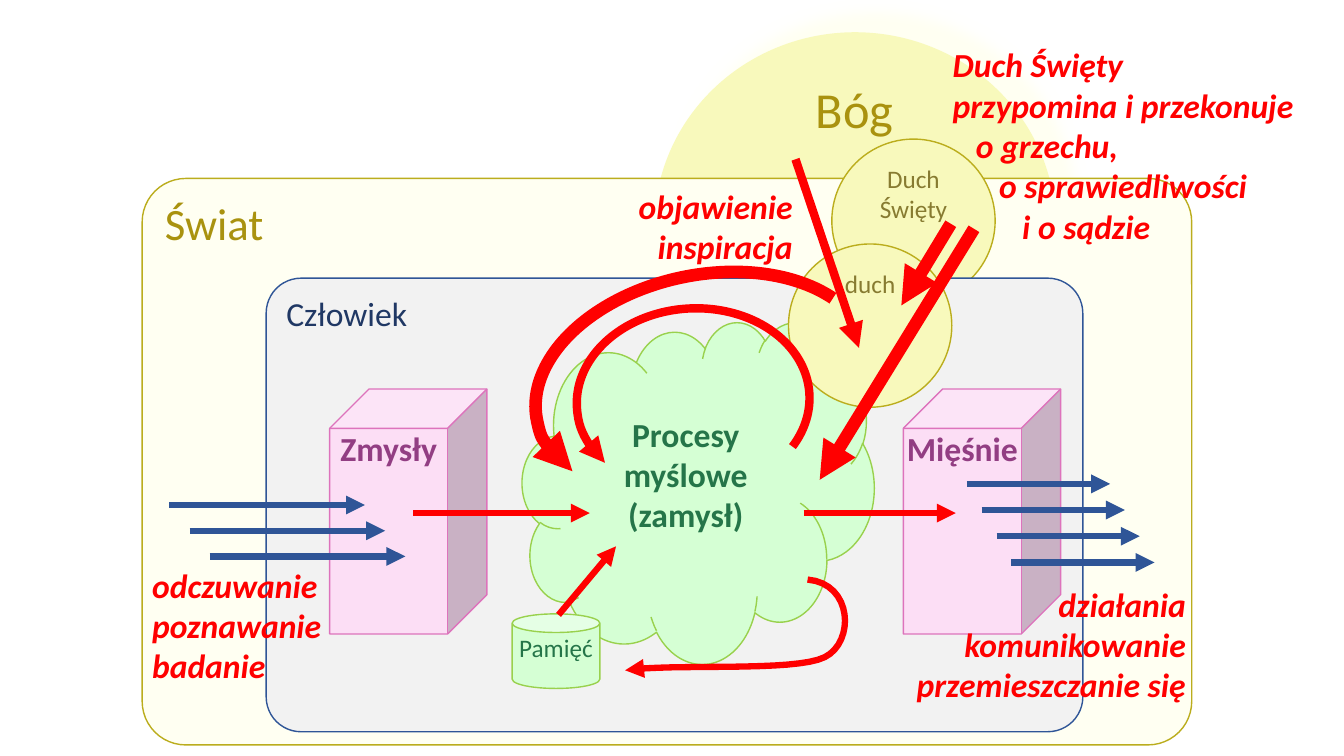
from lxml.etree import SubElement
from pptx import Presentation
from pptx.dml.color import RGBColor
from pptx.enum.shapes import MSO_CONNECTOR, MSO_SHAPE
from pptx.enum.text import MSO_ANCHOR, PP_ALIGN
from pptx.oxml.ns import qn
from pptx.util import Inches, Pt

FONT = "Calibri"
COLORS = {
    "spirit": "F8F9BC", "spirit_line": "BBAD1D", "spirit_text": "877B31",
    "world": "FFFFF2", "world_text": "A9920F",
    "human": "F2F2F2", "human_line": "2F5597", "human_text": "203864",
    "body": "FCDEF5", "body_line": "DD73BC", "body_text": "923E83",
    "mind": "D5FFD4", "mind_line": "99D14D", "mind_text": "257549",
    "red": "FF0000",
}
LEFT, CENTER, RIGHT = PP_ALIGN.LEFT, PP_ALIGN.CENTER, PP_ALIGN.RIGHT

GOD = (6.49, 0.32, 3.98, 3.85)
GOD_NAME = (7.07, 0.73, 2.81, 0.88)
FRAMES = [
    (["Świat"], (1.41, 1.77, 10.41, 5.62), "world", "spirit_line", "world_text", 32),
    (["Człowiek"], (2.64, 2.76, 8.1, 4.5), "human", "human_line", "human_text", 24),
]
HOLY_SPIRIT = (["Duch Święty"], MSO_SHAPE.OVAL, (8.25, 1.38, 1.62, 1.62), "spirit", 18, False, 0)
PARTS = [
    (["Mięśnie"], MSO_SHAPE.CUBE, (8.96, 3.86, 1.56, 2.43), "body", 24, True, 0),
    (["Zmysły"], MSO_SHAPE.CUBE, (3.27, 3.86, 1.56, 2.43), "body", 24, True, 0),
    (["Procesy myślowe", "(zamysł)"], MSO_SHAPE.CLOUD, (5.18, 3.19, 3.49, 3.39), "mind", 24, True, 0.4),
    (["Pamięć"], MSO_SHAPE.CAN, (5.08, 6.09, 0.87, 0.74), "mind", 18, False, 0),
    (["duch"], MSO_SHAPE.OVAL, (7.82, 2.42, 1.62, 1.62), "spirit", 18, False, 0),
]
SERIES = [
    ((9.59, 4.8), (0.147, 0.26), 1.42, 4),
    ((1.68, 5.01), (0.2, 0.255), 1.94, 3),
]
RED_ARROWS = [
    ((7.97, 5.09), (9.48, 5.09), 4.5),
    ((4.1, 5.09), (5.85, 5.09), 4.5),
    ((5.54, 6.1), (6.11, 5.42), 4.5),
    ((7.89, 1.58), (8.52, 3.45), 6),
    ((9.66, 2.27), (8.13, 4.76), 9),
    ((9.43, 2.22), (8.94, 3.03), 9),
]
ARCS = [
    ((5.72, 3.06, 2.31, 1.83), 176.6, (91.055, 19.066), 6),
    ((5.29, 2.73, 3.38, 2.19), 168, (121.241, 12.688), 9),
]
MEMORY_CURVES = [
    ((8.01, 5.75), (8.46, 5.79), (8.48, 6.37), (8.18, 6.52)),
    ((8.18, 6.52), (7.88, 6.67), (6.66, 6.58), (6.2, 6.65)),
]
CURVE_STEPS = 16
INDENT = 0.23
NOTES = [
    ((4.98, 1.79, 2.98, 0.91), RIGHT, [("objawienie", 0), ("inspiracja", 0)]),
    ((1.41, 5.55, 2.31, 1.31), LEFT, [("odczuwanie", 0), ("poznawanie", 0), ("badanie", 0)]),
    ((8.88, 5.74, 2.98, 1.31), RIGHT,
     [("działania", 0), ("komunikowanie", 0), ("przemieszczanie się", 0)]),
    ((9.35, 0.39, 3.98, 2.12), LEFT,
     [("Duch Święty", 0), ("przypomina i przekonuje", 0), ("o grzechu,", 1),
      ("o sprawiedliwości", 2), ("i o sądzie", 3)]),
]


def rgb(name):
    return RGBColor.from_string(COLORS[name])


def write(frame, lines, size, color, align, bold=False, italic=False):
    frame.word_wrap = True
    frame.vertical_anchor = MSO_ANCHOR.TOP
    frame.text = "\n".join(lines)
    for paragraph in frame.paragraphs:
        paragraph.alignment = align
        for run in paragraph.runs:
            run.font.name = FONT
            run.font.size = Pt(size)
            run.font.bold = bold
            run.font.italic = italic
            run.font.color.rgb = rgb(color)


def set_margins(frame, margin, top):
    frame.margin_left = frame.margin_right = frame.margin_bottom = Inches(margin)
    frame.margin_top = Inches(top)


def add_filled(shapes, kind, box, fill, line=None):
    shape = shapes.add_shape(kind, *map(Inches, box))
    shape.shadow.inherit = False
    shape.fill.solid()
    shape.fill.fore_color.rgb = rgb(fill)
    if line:
        shape.line.color.rgb = rgb(line)
        shape.line.width = Pt(1)
    else:
        shape.line.fill.background()
    return shape


def add_frame(shapes, lines, box, fill, line, color, size):
    frame = add_filled(shapes, MSO_SHAPE.ROUNDED_RECTANGLE, box, fill, line)
    frame.adjustments[0] = 0.077
    write(frame.text_frame, lines, size, color, LEFT)


def add_part(shapes, lines, kind, box, family, size, bold, top):
    part = add_filled(shapes, kind, box, family, family + "_line")
    set_margins(part.text_frame, 0, top)
    write(part.text_frame, lines, size, family + "_text", CENTER, bold)


def add_head(stroke, color, width):
    stroke.line.color.rgb = rgb(color)
    stroke.line.width = Pt(width)
    SubElement(stroke.line._get_or_add_ln(), qn("a:tailEnd"), type="triangle")


def add_arrow(shapes, start, end, color, width):
    arrow = shapes.add_connector(MSO_CONNECTOR.STRAIGHT, *map(Inches, start + end))
    add_head(arrow, color, width)
    SubElement(arrow._element.spPr, qn("a:effectLst"))


def add_god(shapes):
    god = add_filled(shapes, MSO_SHAPE.OVAL, GOD, "spirit")
    glow = SubElement(god._element.spPr.find(qn("a:effectLst")), qn("a:outerShdw"),
                      blurRad=str(Pt(10)), dist=str(Pt(20)), dir=str(315 * 60000),
                      algn="bl", rotWithShape="0")
    SubElement(glow, qn("a:srgbClr"), val=COLORS["world"])
    name = shapes.add_textbox(*map(Inches, GOD_NAME)).text_frame
    set_margins(name, 0.04, 0.04)
    write(name, ["Bóg"], 36, "world_text", CENTER)


def curve_point(curve, t):
    weights = ((1 - t) ** 3, 3 * t * (1 - t) ** 2, 3 * t * t * (1 - t), t ** 3)
    return tuple(Inches(sum(w * p[axis] for w, p in zip(weights, curve))) for axis in (0, 1))


def add_memory_arrow(shapes):
    points = [curve_point(curve, step / CURVE_STEPS)
              for curve in MEMORY_CURVES for step in range(1, CURVE_STEPS + 1)]
    builder = shapes.build_freeform(*curve_point(MEMORY_CURVES[0], 0))
    builder.add_line_segments(points, close=False)
    memory_arrow = builder.convert_to_shape()
    memory_arrow.shadow.inherit = False
    memory_arrow.fill.background()
    add_head(memory_arrow, "red", 4.5)


def add_arc(shapes, box, rotation, ends, width):
    arc = shapes.add_shape(MSO_SHAPE.ARC, *map(Inches, box))
    arc.shadow.inherit = False
    arc.fill.background()
    arc.rotation = rotation
    arc._element.spPr.xfrm.set("flipV", "1")
    arc.adjustments[0], arc.adjustments[1] = ends
    add_head(arc, "red", width)


def add_note(shapes, box, align, lines):
    note = shapes.add_textbox(*map(Inches, box)).text_frame
    write(note, [text for text, level in lines], 24, "red", align, True, True)
    for paragraph, (text, level) in zip(note.paragraphs, lines):
        if level:
            paragraph._p.get_or_add_pPr().set("marL", str(Inches(INDENT * level)))


def main():
    prs = Presentation()
    prs.slide_width, prs.slide_height = Inches(13.33), Inches(7.5)
    shapes = prs.slides.add_slide(prs.slide_layouts[6]).shapes
    world, human = FRAMES
    add_god(shapes)
    add_frame(shapes, *world)
    add_part(shapes, *HOLY_SPIRIT)
    add_frame(shapes, *human)
    for part in PARTS:
        add_part(shapes, *part)
    for (x, y), (dx, dy), length, count in SERIES:
        for i in range(count):
            start = (x + i * dx, y + i * dy)
            add_arrow(shapes, start, (start[0] + length, start[1]), "human_line", 4.5)
    add_memory_arrow(shapes)
    for arc in ARCS:
        add_arc(shapes, *arc)
    for start, end, width in RED_ARROWS:
        add_arrow(shapes, start, end, "red", width)
    for note in NOTES:
        add_note(shapes, *note)
    prs.save("out.pptx")


if __name__ == "__main__":
    main()
